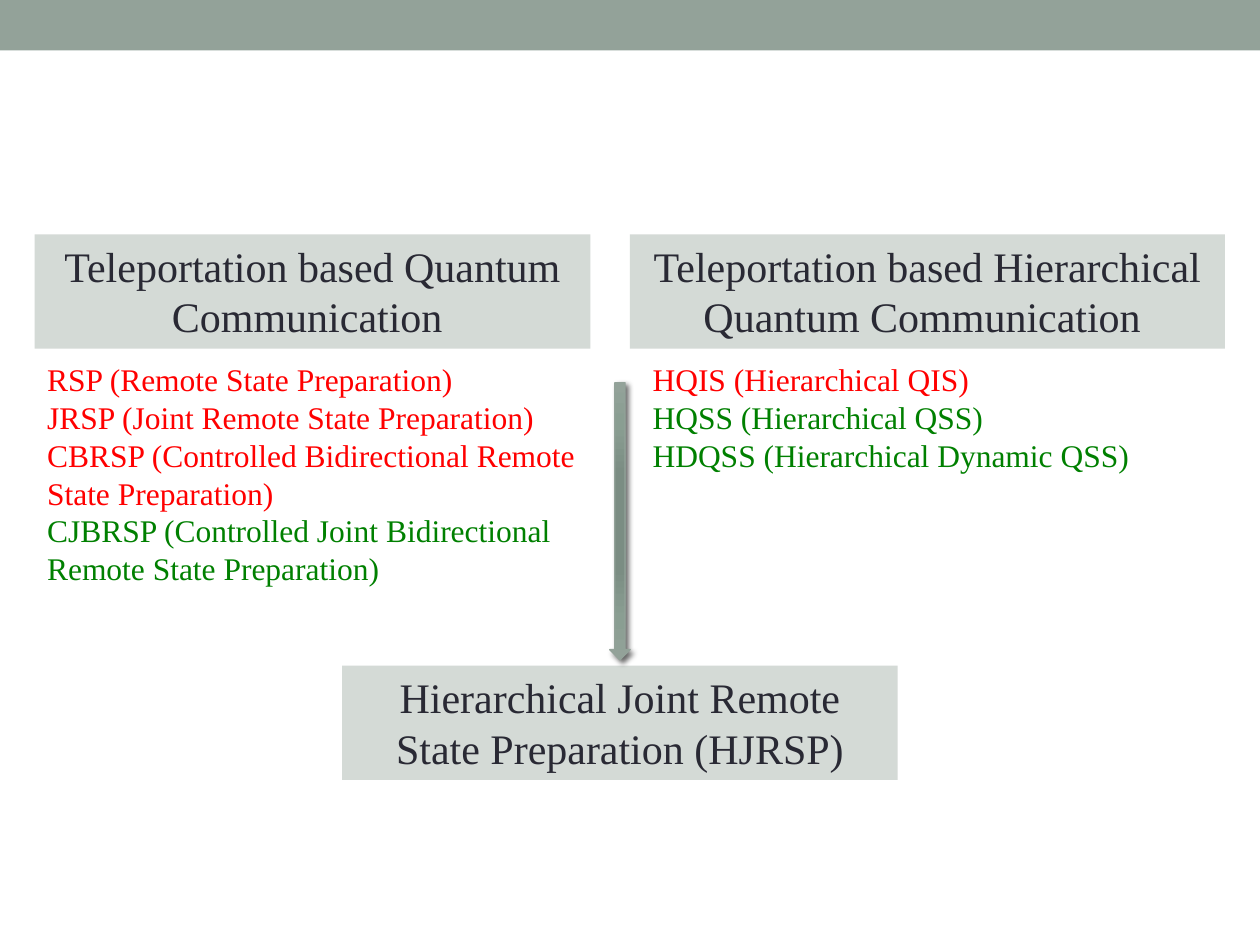
"""Build the slide on hierarchical joint remote state preparation."""
from lxml import etree
from pptx import Presentation
from pptx.dml.color import RGBColor
from pptx.enum import shapes, text
from pptx.util import Pt

THEME = {
    "font": "Times New Roman", "head": 24, "body": 18,
    "bar": "93A299", "panel": "D4DAD6", "ink": "292934",
    "red": "FF0000", "green": "008000", "shade": "000000",
    "fade": [(0, "7B8E82"), (34, "7B8D83"), (70, "8A9E92"), (100, "93A299")],
}
WIDE, HIGH = 720, 540
BAR = (0, 0, WIDE, 28.8)
ARROW = (348.4, 218.7, 11.7, 158.4)
HEAD_H = 65.4
TOP, LIST_TOP, END_TOP = 133.9, 202.3, 380.3
COL_W = 317.5

HEADS = [
    ("Teleportation based Quantum Communication ", 19.8, TOP, COL_W),
    ("Teleportation based Hierarchical Quantum Communication ", 360, TOP, 340),
    ("Hierarchical Joint Remote State Preparation (HJRSP)", 195.5, END_TOP, COL_W),
]
LISTS = [
    (19.8, 138.2, [
        ("RSP (Remote State Preparation)", "red"),
        ("JRSP (Joint Remote State Preparation)", "red"),
        ("CBRSP (Controlled Bidirectional Remote State Preparation)", "red"),
        ("CJBRSP (Controlled Joint Bidirectional Remote State Preparation)", "green"),
    ]),
    (365.8, 72.7, [
        ("HQIS (Hierarchical QIS)", "red"),
        ("HQSS (Hierarchical QSS)", "green"),
        ("HDQSS (Hierarchical Dynamic QSS)", "green"),
    ]),
]
NS = "http://schemas.openxmlformats.org/drawingml/2006/main"


def tint(name):
    return RGBColor.from_string(THEME[name])


def place(box):
    return [Pt(n) for n in box]


def block(slide, box, fill, kind=shapes.MSO_SHAPE.RECTANGLE):
    shape = slide.shapes.add_shape(kind, *place(box))
    shape.shadow.inherit = False
    shape.line.fill.background()
    if fill:
        shape.fill.solid()
        shape.fill.fore_color.rgb = tint(fill)
    return shape


def write(shape, rows, size, align):
    frame = shape.text_frame
    frame.word_wrap = True
    frame.vertical_anchor = text.MSO_ANCHOR.TOP
    for i, (words, color) in enumerate(rows):
        para = frame.add_paragraph() if i else frame.paragraphs[0]
        para.text = words
        para.alignment = align
        para.font.name = THEME["font"]
        para.font.size = Pt(THEME[size])
        para.font.color.rgb = tint(color)
    frame.auto_size = text.MSO_AUTO_SIZE.SHAPE_TO_FIT_TEXT


def node(root, tag, **attrs):
    return etree.SubElement(root, f"{{{NS}}}{tag}", {k: str(v) for k, v in attrs.items()})


def color(root, value):
    return node(root, "srgbClr", val=value)


def arrow(slide):
    shape = block(slide, ARROW, None, shapes.MSO_SHAPE.DOWN_ARROW)
    shape.line.color.rgb = tint("bar")
    shape.line.width = Pt(0.75)
    props = shape.element.spPr
    grad = etree.Element(f"{{{NS}}}gradFill", rotWithShape="1")
    stops = node(grad, "gsLst")
    for pos, value in THEME["fade"]:
        color(node(stops, "gs", pos=pos * 1000), value)
    way = node(grad, "path", path="circle")
    node(way, "fillToRect", **dict.fromkeys("ltrb", 100000))
    props.find(f"{{{NS}}}ln").addprevious(grad)
    cast = node(props.find(f"{{{NS}}}effectLst"), "outerShdw",
                blurRad=Pt(3), dist=Pt(2), dir=45 * 60000, rotWithShape=0)
    node(color(cast, THEME["shade"]), "alpha", val=60000)


def main():
    deck = Presentation()
    deck.slide_width, deck.slide_height = Pt(WIDE), Pt(HIGH)
    slide = deck.slides.add_slide(deck.slide_layouts[6])
    block(slide, BAR, "bar")
    for words, left, top, width in HEADS:
        panel = block(slide, (left, top, width, HEAD_H), "panel")
        write(panel, [(words, "ink")], "head", text.PP_ALIGN.CENTER)
    arrow(slide)
    for left, height, rows in LISTS:
        box = slide.shapes.add_textbox(*place((left, LIST_TOP, COL_W, height)))
        write(box, rows, "body", text.PP_ALIGN.LEFT)
    deck.save("out.pptx")


if __name__ == "__main__":
    main()
